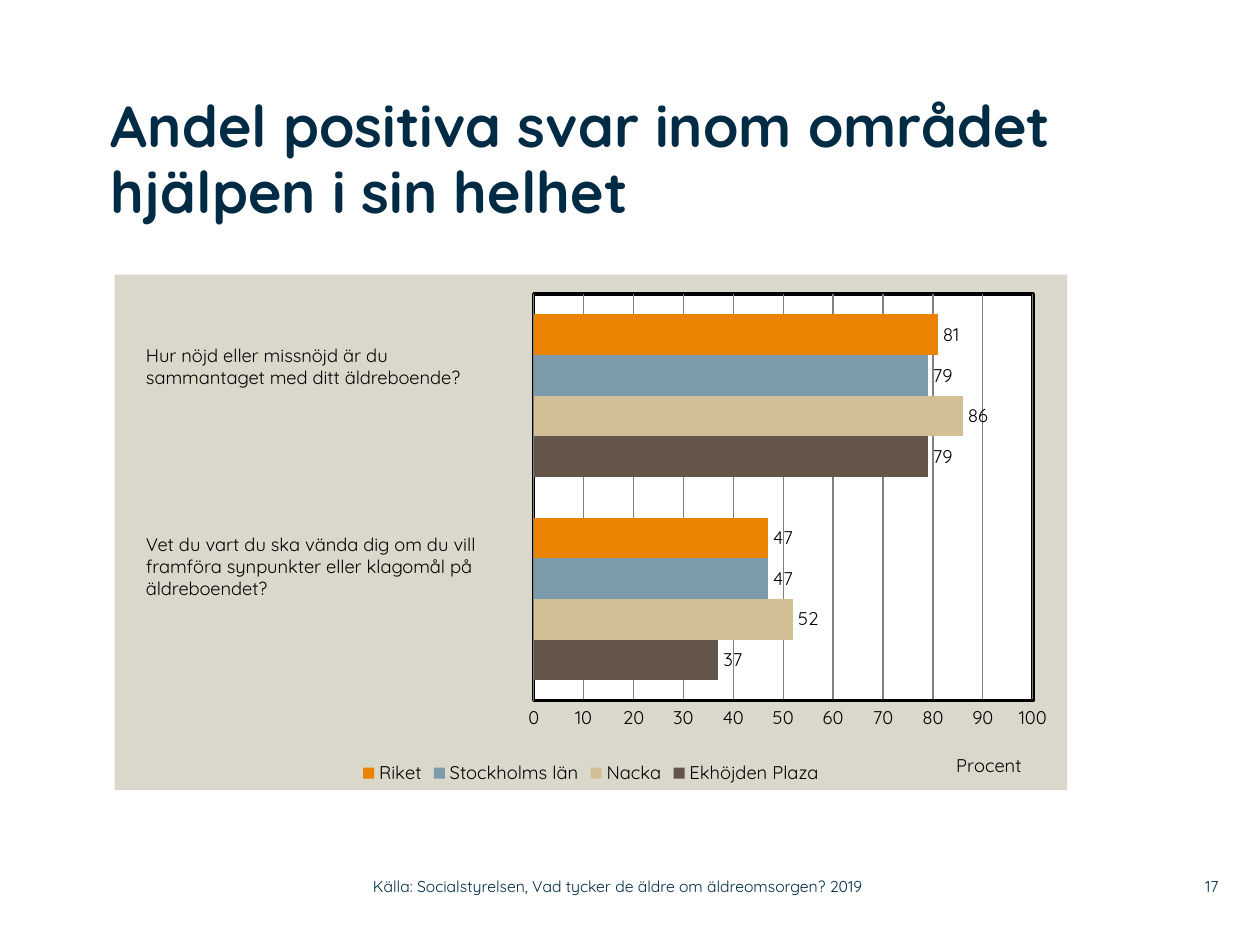
"""Build a slide with a clustered bar chart of positive survey answers."""
from lxml import etree
from pptx import Presentation
from pptx.chart.data import CategoryChartData
from pptx.dml.color import RGBColor
from pptx.enum.chart import XL_CHART_TYPE, XL_LABEL_POSITION, XL_LEGEND_POSITION, XL_TICK_MARK
from pptx.enum.text import MSO_ANCHOR, PP_ALIGN
from pptx.oxml import parse_xml
from pptx.oxml.ns import nsdecls, qn
from pptx.util import Inches, Pt

BARS = XL_CHART_TYPE.BAR_CLUSTERED
OUT_END = XL_LABEL_POSITION.OUTSIDE_END
BOTTOM = XL_LEGEND_POSITION.BOTTOM
NO_TICK = XL_TICK_MARK.NONE
TOP, MIDDLE = MSO_ANCHOR.TOP, MSO_ANCHOR.MIDDLE
LEFT, RIGHT = PP_ALIGN.LEFT, PP_ALIGN.RIGHT

FONT = "Quicksand"
BLACK = RGBColor(0x00, 0x00, 0x00)
NAVY = RGBColor(0x00, 0x2B, 0x45)
GREY = RGBColor(0x80, 0x80, 0x80)
BROWN = RGBColor(0x63, 0x55, 0x49)
SAND = RGBColor(0xD3, 0xBF, 0x96)
BLUE = RGBColor(0x7D, 0x9A, 0xAA)
ORANGE = RGBColor(0xE9, 0x83, 0x00)
STONE = RGBColor(0xDA, 0xD7, 0xCB)
WHITE = RGBColor(0xFF, 0xFF, 0xFF)

SERIES = [
    ("Ekhöjden Plaza", (37, 79), BROWN),
    ("Nacka", (52, 86), SAND),
    ("Stockholms län", (47, 79), BLUE),
    ("Riket", (47, 81), ORANGE),
]


def add_text(slide, box, lines, size, color, inset=(0, 0), anchor=TOP, align=LEFT, bold=False):
    frame = slide.shapes.add_textbox(*map(Inches, box)).text_frame
    frame.word_wrap = True
    frame.vertical_anchor = anchor
    frame.margin_left = frame.margin_right = Inches(inset[0])
    frame.margin_top = frame.margin_bottom = Inches(inset[1])
    frame.text = lines
    for para in frame.paragraphs:
        para.alignment = align
        for run in para.runs:
            run.font.name = FONT
            run.font.size = Pt(size)
            run.font.bold = bold
            run.font.color.rgb = color
    return frame


def add_layout(parent, index, **places):
    layout = parse_xml(f"<c:layout {nsdecls('c')}><c:manualLayout/></c:layout>")
    for name, value in places.items():
        etree.SubElement(layout[0], qn(f"c:{name}")).set("val", str(value))
    for old in parent.findall(qn("c:layout")):
        parent.remove(old)
    parent.insert(index, layout)


prs = Presentation()
prs.slide_width, prs.slide_height = Inches(10), Inches(7.5)
slide = prs.slides.add_slide(prs.slide_layouts[6])

data = CategoryChartData()
data.categories = ["1", "2"]
for name, values, color in SERIES:
    data.add_series(name, values)
place = map(Inches, (0.91, 2.18, 7.56, 4.09))
chart = slide.shapes.add_chart(BARS, *place, data).chart
chart.has_title = False
chart.font.name = FONT
chart.font.size = Pt(10.5)
chart.font.color.rgb = BLACK
chart.has_legend = True
chart.legend.position = BOTTOM
chart.legend.include_in_layout = False

plot = chart.plots[0]
plot.gap_width = 100
plot.overlap = 0
plot.vary_by_categories = False
for series, (name, values, color) in zip(plot.series, SERIES):
    series.format.fill.solid()
    series.format.fill.fore_color.rgb = color
    labels = series.data_labels
    labels.show_value = True
    labels.position = OUT_END

chart.category_axis.visible = False
axis = chart.value_axis
axis.minimum_scale, axis.maximum_scale, axis.major_unit = 0, 100, 10
axis.major_tick_mark = axis.minor_tick_mark = NO_TICK
axis.format.line.color.rgb = BLACK
axis.format.line.width = Pt(2)
axis.has_major_gridlines = True
axis.major_gridlines.format.line.color.rgb = GREY
axis.major_gridlines.format.line.width = Pt(0.75)
title = axis.axis_title
title.text_frame.text = "Procent"
font = title.text_frame.paragraphs[0].runs[0].font
font.name, font.size, font.bold = FONT, Pt(10.5), False
font.color.rgb = BLACK
add_layout(title._element, 1, xMode="edge", yMode="edge", x=0.88, y=0.92)

space = chart._chartSpace
area = space.chart.plotArea
add_layout(area, 0, layoutTarget="inner", xMode="edge", yMode="edge",
           x=0.44, y=0.038, w=0.524, h=0.789)
fill = "<c:spPr {}><a:solidFill><a:srgbClr val='{}'/></a:solidFill><a:ln{}</a:ln></c:spPr>"
edge = f" w='{Pt(2)}'><a:solidFill><a:srgbClr val='{BLACK}'/></a:solidFill>"
area.append(parse_xml(fill.format(nsdecls("c", "a"), WHITE, edge)))
space.chart.addnext(parse_xml(fill.format(nsdecls("c", "a"), STONE, "><a:noFill/>")))

heading = add_text(slide, (0.88, 0.75, 7.6, 1.42),
                   "Andel positiva svar inom området hjälpen i sin helhet", 33, NAVY, bold=True)
heading.paragraphs[0].line_spacing = 0.95
add_text(slide, (1.06, 2.68, 2.98, 0.45),
         "Hur nöjd eller missnöjd är du\nsammantaget med ditt äldreboende?",
         10.5, BLACK, (0.1, 0.05))
add_text(slide, (1.06, 4.18, 2.97, 0.63),
         "Vet du vart du ska vända dig om du vill framföra synpunkter eller klagomål på äldreboendet?",
         10.5, BLACK, (0.1, 0.05))
add_text(slide, (9.2, 6.89, 0.47, 0.29), "17", 9, NAVY, anchor=MIDDLE, align=RIGHT)
add_text(slide, (2.96, 6.89, 4.43, 0.29),
         "Källa: Socialstyrelsen, Vad tycker de äldre om äldreomsorgen? 2019",
         9, NAVY, anchor=MIDDLE)

prs.save("out.pptx")
